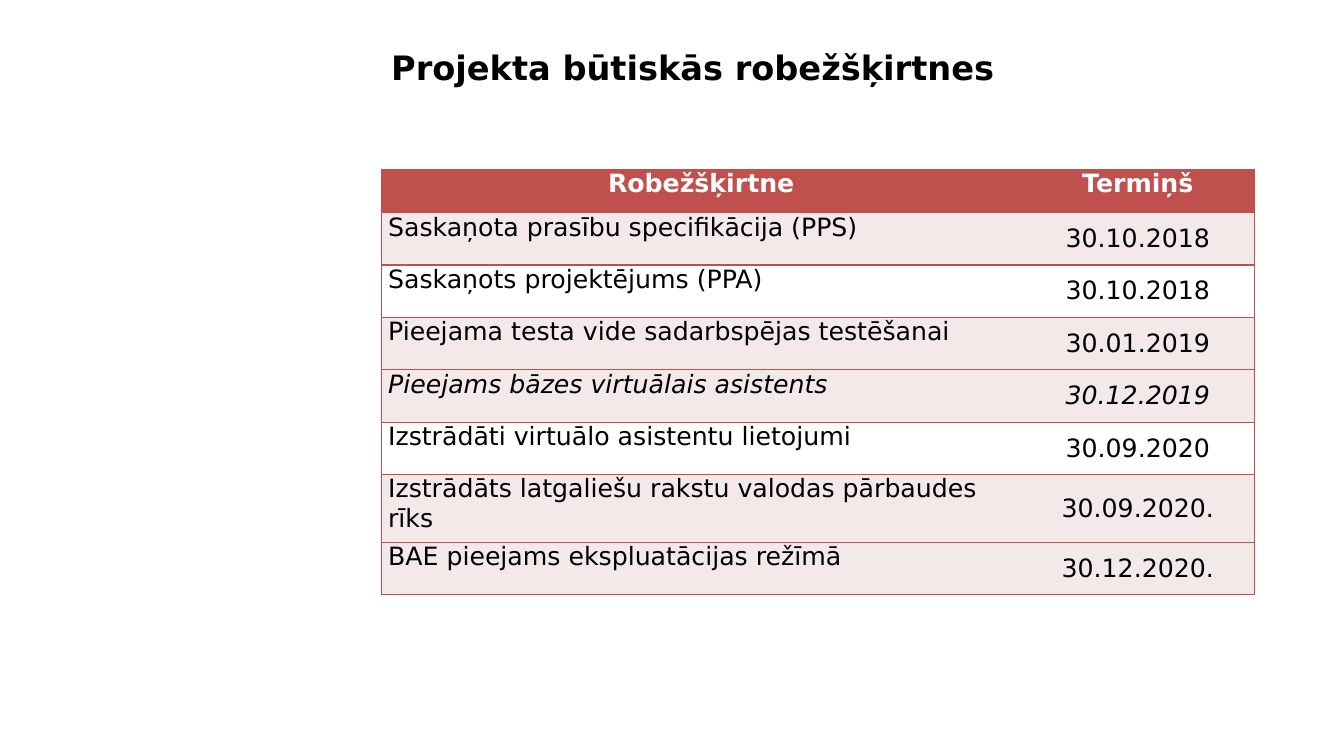
import pptx
import pptx.dml.color
import pptx.enum.text
import pptx.oxml.ns
import pptx.util
from lxml import etree
from pptx.util import Inches

ALIGN = pptx.enum.text.PP_ALIGN
ANCHOR = pptx.enum.text.MSO_ANCHOR

MILESTONES = [
    ("Saskaņota prasību specifikācija (PPS)", "30.10.2018"),
    ("Saskaņots projektējums (PPA)", "30.10.2018"),
    ("Pieejama testa vide sadarbspējas testēšanai", "30.01.2019"),
    ("Pieejams bāzes virtuālais asistents", "30.12.2019"),
    ("Izstrādāti virtuālo asistentu lietojumi", "30.09.2020"),
    ("Izstrādāts latgaliešu rakstu valodas pārbaudes rīks", "30.09.2020."),
    ("BAE pieejams ekspluatācijas režīmā", "30.12.2020."),
]
WHITE_ROWS = (2, 5)
ITALIC_ROW = 4
ROW_HEIGHTS = [0.43, 0.52, 0.52, 0.52, 0.52, 0.52, 0.67, 0.52]


def color(value):
    return pptx.dml.color.RGBColor.from_string(value)


class MilestoneSlide:
    FONT = "DejaVu Sans"
    RED = "C0504D"
    PINK = "F4E9E9"
    WHITE = "FFFFFF"
    BLACK = "000000"

    def __init__(self, presentation):
        self.slide = presentation.slides.add_slide(presentation.slide_layouts[5])

    def style(self, paragraph, size, text_color, bold=False, italic=False, align=ALIGN.LEFT):
        paragraph.alignment = align
        font = paragraph.font
        font.name = self.FONT
        font.size = pptx.util.Pt(size)
        font.bold = bold
        font.italic = italic
        font.color.rgb = color(text_color)

    def title(self, text):
        shape = self.slide.shapes.title
        shape.left, shape.top = Inches(3.78), Inches(0.42)
        shape.width, shape.height = Inches(8.89), Inches(1.13)
        frame = shape.text_frame
        frame.text = text
        frame.auto_size = pptx.enum.text.MSO_AUTO_SIZE.NONE
        frame.vertical_anchor = ANCHOR.TOP
        self.style(frame.paragraphs[0], 24, self.BLACK, bold=True)

    def borders(self, cell, visible):
        """Draw the red edges named in visible (L, R, T, B) and clear the others."""
        properties = cell._tc.get_or_add_tcPr()
        for edge in "LRTB":
            line = etree.SubElement(properties, pptx.oxml.ns.qn(f"a:ln{edge}"))
            if edge in visible:
                line.set("w", str(pptx.util.Pt(1)))
                fill = etree.SubElement(line, pptx.oxml.ns.qn("a:solidFill"))
                etree.SubElement(fill, pptx.oxml.ns.qn("a:srgbClr"), val=self.RED)
            else:
                etree.SubElement(line, pptx.oxml.ns.qn("a:noFill"))

    def cell(self, cell, text, fill, visible, anchor, **text_style):
        self.borders(cell, visible)
        cell.fill.solid()
        cell.fill.fore_color.rgb = color(fill)
        cell.margin_left = cell.margin_right = Inches(0.07)
        cell.margin_top = cell.margin_bottom = 0
        cell.vertical_anchor = anchor
        cell.text = text
        paragraph = cell.text_frame.paragraphs[0]
        paragraph.space_after = pptx.util.Pt(3)
        self.style(paragraph, 18, **text_style)

    def table(self, header, milestones):
        rows = [header, *milestones]
        table = self.slide.shapes.add_table(
            len(rows), 2, Inches(3.78), Inches(1.68), Inches(8.66), Inches(sum(ROW_HEIGHTS))
        ).table
        table.horz_banding = False
        table.columns[0].width, table.columns[1].width = Inches(6.35), Inches(2.31)
        for row, (texts, height) in enumerate(zip(rows, ROW_HEIGHTS)):
            table.rows[row].height = Inches(height)
            is_header = row == 0
            if is_header:
                fill = self.RED
            else:
                fill = self.WHITE if row in WHITE_ROWS else self.PINK
            for column, text in enumerate(texts):
                is_date = column == 1 and not is_header
                self.cell(
                    table.cell(row, column), text, fill,
                    visible=("LTB", "RTB")[column],
                    anchor=ANCHOR.MIDDLE if is_date else ANCHOR.TOP,
                    text_color=self.WHITE if is_header else self.BLACK,
                    bold=is_header,
                    italic=row == ITALIC_ROW,
                    align=ALIGN.CENTER if is_header or is_date else ALIGN.LEFT,
                )


def main():
    presentation = pptx.Presentation()
    presentation.slide_width, presentation.slide_height = Inches(13.33), Inches(7.5)
    slide = MilestoneSlide(presentation)
    slide.title("Projekta būtiskās robežšķirtnes")
    slide.table(("Robežšķirtne", "Termiņš"), MILESTONES)
    presentation.save("out.pptx")


if __name__ == "__main__":
    main()
